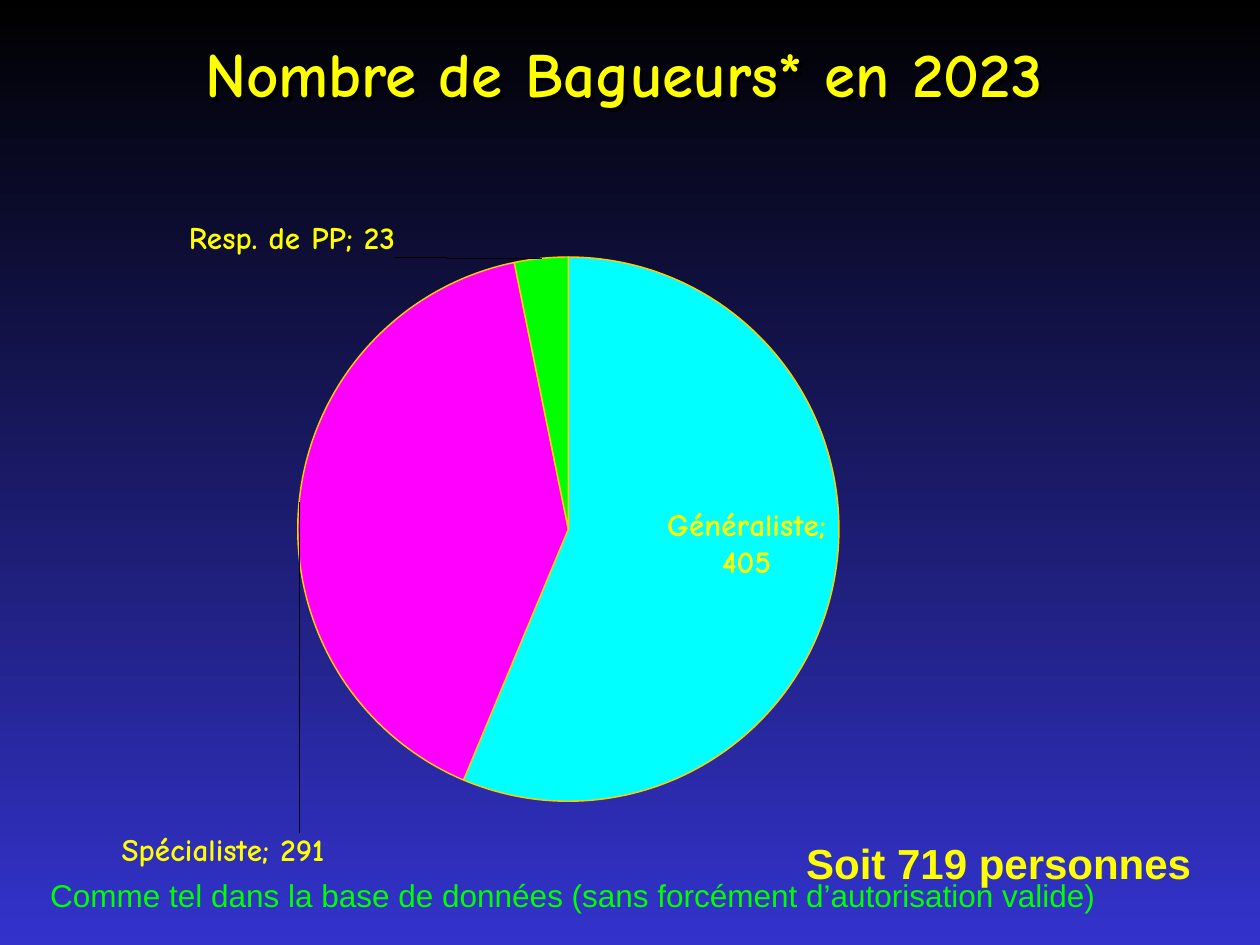
from lxml.etree import SubElement as Sub
from pptx import Presentation
from pptx.chart.data import CategoryChartData as Data
from pptx.dml.color import RGBColor as Rgb
from pptx.enum.chart import XL_CHART_TYPE as Kind, XL_LABEL_POSITION as Pos
from pptx.enum.text import MSO_AUTO_SIZE as Auto, PP_ALIGN as Align
from pptx.oxml import parse_xml
from pptx.oxml.ns import nsdecls, qn
from pptx.util import Inches, Pt

WIDE, HIGH = Inches(10), Inches(7.5)
HUES = {
    "black": "000000", "blue": "3333CC", "yellow": "FFFF00", "gold": "FFCC00",
    "cyan": "00FFFF", "pink": "FF00FF", "green": "00FF00",
}
COUNTS = {"Généraliste": 405, "Spécialiste": 291, "Resp. de PP": 23}
SLICES = [
    ("cyan", Pos.INSIDE_END, None),
    ("pink", Pos.OUTSIDE_END, {"x": 0.03, "y": 0.54}),
    ("green", Pos.OUTSIDE_END, {"x": -0.13, "y": 0.01}),
]
PLOT = {"layoutTarget": "inner", "xMode": "edge", "yMode": "edge",
        "x": 0.03, "y": 0.1, "w": 0.79, "h": 0.8}
TITLE = {"name": "Comic Neue", "size": Pt(36), "bold": True}
TOTAL = {"name": "Arial", "size": Pt(24), "bold": True}
NOTE = {"name": "Arial", "size": Pt(18), "bold": False}
LABEL = {"name": "Comic Neue", "size": Pt(17.9), "bold": True}


def tint(name):
    """Return a named colour."""
    return Rgb.from_string(HUES[name])


def area(left, top, width, height):
    """Turn shares of the slide into lengths."""
    return [int(share * side) for share, side in zip((left, top, width, height), (WIDE, HIGH) * 2)]


def style(font, form, hue):
    """Apply format values and a colour to a font."""
    for key, value in form.items():
        setattr(font, key, value)
    font.color.rgb = tint(hue)


def paint(slide):
    """Fill the background from black down to blue."""
    fill = slide.background.fill
    fill.gradient()
    fill.gradient_angle = 270
    for stop, hue, place in zip(fill.gradient_stops, ("black", "blue"), (0, 1)):
        stop.color.rgb, stop.position = tint(hue), place


def write(slide, text, box, form, hue, align=Align.LEFT, grow=True):
    """Add a line of text and return its box."""
    shape = slide.shapes.add_textbox(*area(*box))
    frame = shape.text_frame
    frame.word_wrap = True
    frame.auto_size = Auto.SHAPE_TO_FIT_TEXT if grow else Auto.NONE
    line = frame.paragraphs[0]
    line.alignment = align
    run = line.add_run()
    run.text = text
    style(run.font, form, hue)
    return shape


def shade(shape):
    """Give the text of an unfilled box a black shadow."""
    shape._element.spPr.append(parse_xml(
        f'<a:effectLst {nsdecls("a")}><a:outerShdw dist="38100" dir="2700000">'
        f'<a:srgbClr val="{HUES["black"]}"/></a:outerShdw></a:effectLst>'))


def layout(values):
    """Build a manual chart layout."""
    root = parse_xml(f'<c:layout {nsdecls("c")}><c:manualLayout/></c:layout>')
    for key, value in values.items():
        Sub(root[0], qn(f"c:{key}")).set("val", str(value))
    return root


def tag(point, place, shift):
    """Label a slice with its category and value."""
    label = point.data_label
    style(label.font, LABEL, "yellow")
    label.position = place
    node = label._dLbl
    node.find(qn("c:showCatName")).set("val", "1")
    mark = parse_xml(f'<c:separator {nsdecls("c")}>; </c:separator>')
    last = [part for part in node if part.tag.split("}")[1].startswith("show")][-1]
    last.addnext(mark)
    if shift:
        node.find(qn("c:idx")).addnext(layout(shift))
        node.find(qn("c:txPr")).find(qn("a:bodyPr")).set("wrap", "none")


def pie(slide, box):
    """Add the pie of ringers by type."""
    data = Data()
    data.categories = list(COUNTS)
    data.add_series("Series 1", list(COUNTS.values()))
    chart = slide.shapes.add_chart(Kind.PIE, *area(*box), data).chart
    chart.has_legend = chart.has_title = False
    style(chart.font, LABEL, "yellow")
    plot = chart.plots[0]
    plot.vary_by_categories = True
    series = plot.series[0]
    style(series.data_labels.font, LABEL, "yellow")
    for index, (hue, place, shift) in enumerate(SLICES):
        point = series.points[index]
        form = point.format
        form.fill.solid()
        form.fill.fore_color.rgb = tint(hue)
        form.line.color.rgb, form.line.width = tint("gold"), Pt(0.82)
        tag(point, place, shift)
    zone = chart._chartSpace.chart.plotArea
    for old in zone.findall(qn("c:layout")):
        zone.remove(old)
    zone.insert(0, layout(PLOT))


def main():
    """Build and save the slide."""
    deck = Presentation()
    deck.slide_width, deck.slide_height = WIDE, HIGH
    slide = deck.slides.add_slide(deck.slide_layouts[6])
    paint(slide)
    shade(write(slide, "Nombre de Bagueurs* en 2023", (0.07, 0.03, 0.85, 0.17),
                TITLE, "yellow", Align.CENTER, False))
    pie(slide, (0.07, 0.2, 0.89, 0.72))
    write(slide, "Soit 719 personnes", (0.63, 0.88, 0.33, 0.07), TOTAL, "yellow")
    write(slide, "Comme tel dans la base de données (sans forcément d’autorisation valide)",
          (0.03, 0.92, 0.86, 0.05), NOTE, "green")
    deck.save("out.pptx")


if __name__ == "__main__":
    main()
